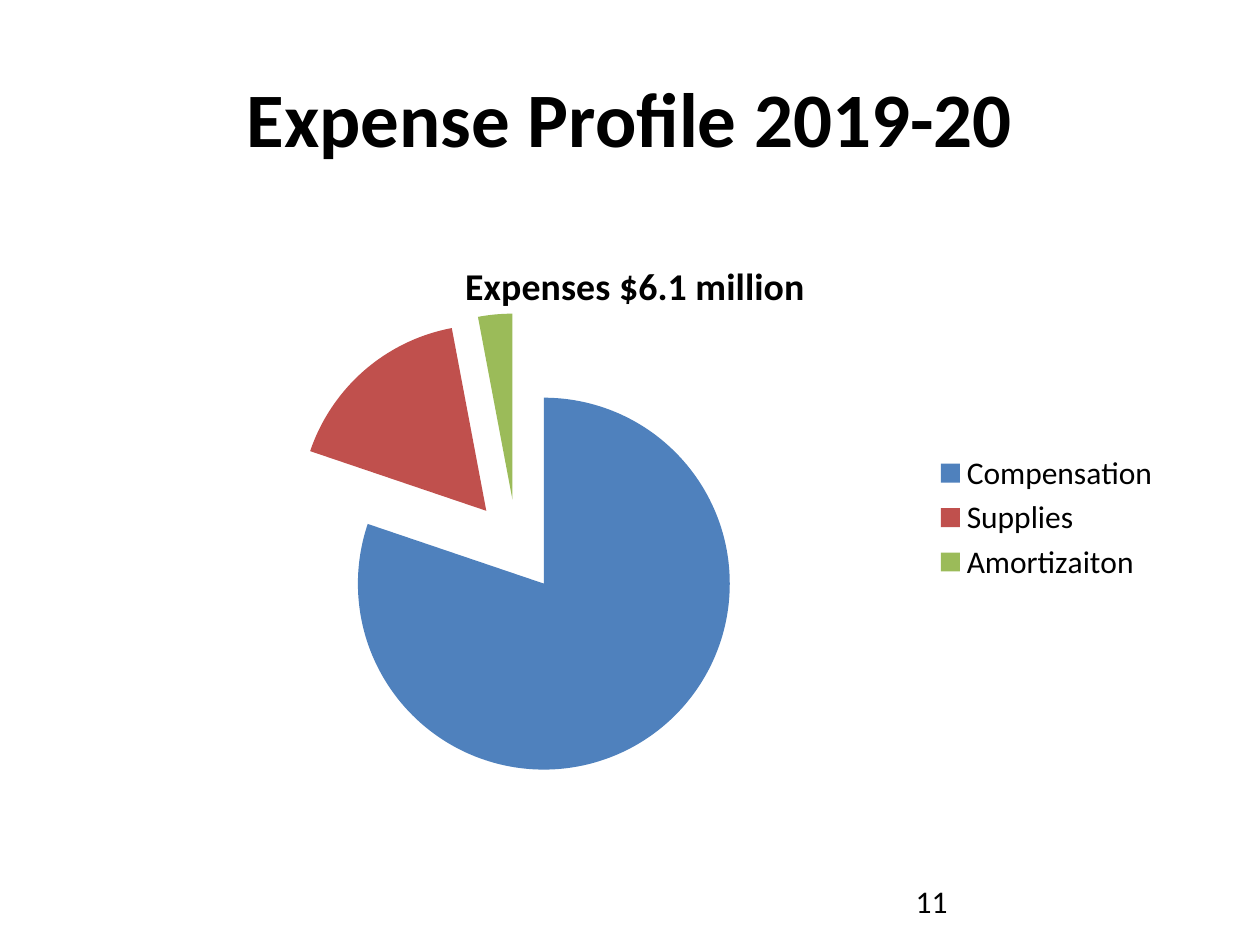
"""Build the expense profile slide with its exploded pie chart."""
from lxml import etree
from pptx import Presentation
from pptx.chart.data import CategoryChartData
from pptx.dml.color import RGBColor
from pptx.enum.chart import XL_CHART_TYPE, XL_LEGEND_POSITION
from pptx.enum.text import MSO_ANCHOR, PP_ALIGN
from pptx.oxml.ns import qn
from pptx.util import Cm, Pt

PIE = XL_CHART_TYPE.PIE_EXPLODED
RIGHT = XL_LEGEND_POSITION.RIGHT
MIDDLE, TOP = MSO_ANCHOR.MIDDLE, MSO_ANCHOR.TOP
LEFT, CENTER = PP_ALIGN.LEFT, PP_ALIGN.CENTER
BLACK = RGBColor(0x00, 0x00, 0x00)
BLUE = RGBColor(0x4F, 0x81, 0xBD)
RED = RGBColor(0xC0, 0x50, 0x4D)
GREEN = RGBColor(0x9B, 0xBB, 0x59)
COSTS = [("Compensation", 81, BLUE), ("Supplies", 17, RED), ("Amortizaiton", 3, GREEN)]


def style(font, size=18, bold=False, color=BLACK, face="Calibri"):
    font.name, font.size, font.bold = face, Pt(size), bold
    font.color.rgb = color


def write(frame, text, align=LEFT, anchor=TOP, **look):
    frame.word_wrap = True
    frame.vertical_anchor = anchor
    line = frame.paragraphs[0]
    line.alignment = align
    run = line.add_run()
    run.text = text
    style(run.font, **look)


class Deck:
    def __init__(self):
        self.file = Presentation()
        self.file.slide_width, self.file.slide_height = Cm(25.4), Cm(19.05)
        self.slide = self.file.slides.add_slide(self.file.slide_layouts[5])

    def title(self, text, box):
        shape = self.slide.shapes.title
        shape.left, shape.top, shape.width, shape.height = map(Cm, box)
        write(shape.text_frame, text, align=CENTER, anchor=MIDDLE, size=44, bold=True)

    def label(self, text, box):
        shape = self.slide.shapes.add_textbox(*map(Cm, box))
        write(shape.text_frame, text)

    def pie(self, name, rows, box, plot):
        data = CategoryChartData()
        data.categories = [row[0] for row in rows]
        data.add_series(name, [row[1] for row in rows])
        chart = self.slide.shapes.add_chart(PIE, *map(Cm, box), data).chart
        style(chart.font)
        chart.has_title = True
        write(chart.chart_title.text_frame, name, align=CENTER, size=21.6, bold=True)
        chart.chart_title.include_in_layout = False
        chart.has_legend = True
        chart.legend.position = RIGHT
        chart.legend.include_in_layout = False
        style(chart.legend.font)
        pie = chart.plots[0]
        pie.vary_by_categories = True
        for spot, row in enumerate(rows):
            fill = pie.series[0].points[spot].format.fill
            fill.solid()
            fill.fore_color.rgb = row[2]
        self.place(chart, plot)

    def place(self, chart, plot):
        area = chart.element.find(".//" + qn("c:plotArea"))
        for old in area.findall(qn("c:layout")):
            area.remove(old)
        layout = etree.Element(qn("c:layout"))
        area.insert(0, layout)
        manual = etree.SubElement(layout, qn("c:manualLayout"))
        tags = ("layoutTarget", "xMode", "yMode", "x", "y", "w", "h")
        for tag, val in zip(tags, ("inner", "edge", "edge", *plot)):
            etree.SubElement(manual, qn("c:" + tag), val=str(val))


def main():
    deck = Deck()
    deck.title("Expense Profile 2019-20", (1.27, 0.76, 22.86, 3.18))
    deck.pie("Expenses $6.1 million", COSTS, (1.96, 4.72, 21.69, 11.43), (0.02, 0.14, 0.74, 0.82))
    deck.label("11", (18.21, 17.65, 5.92, 1.02))
    deck.file.save("out.pptx")


if __name__ == "__main__":
    main()
